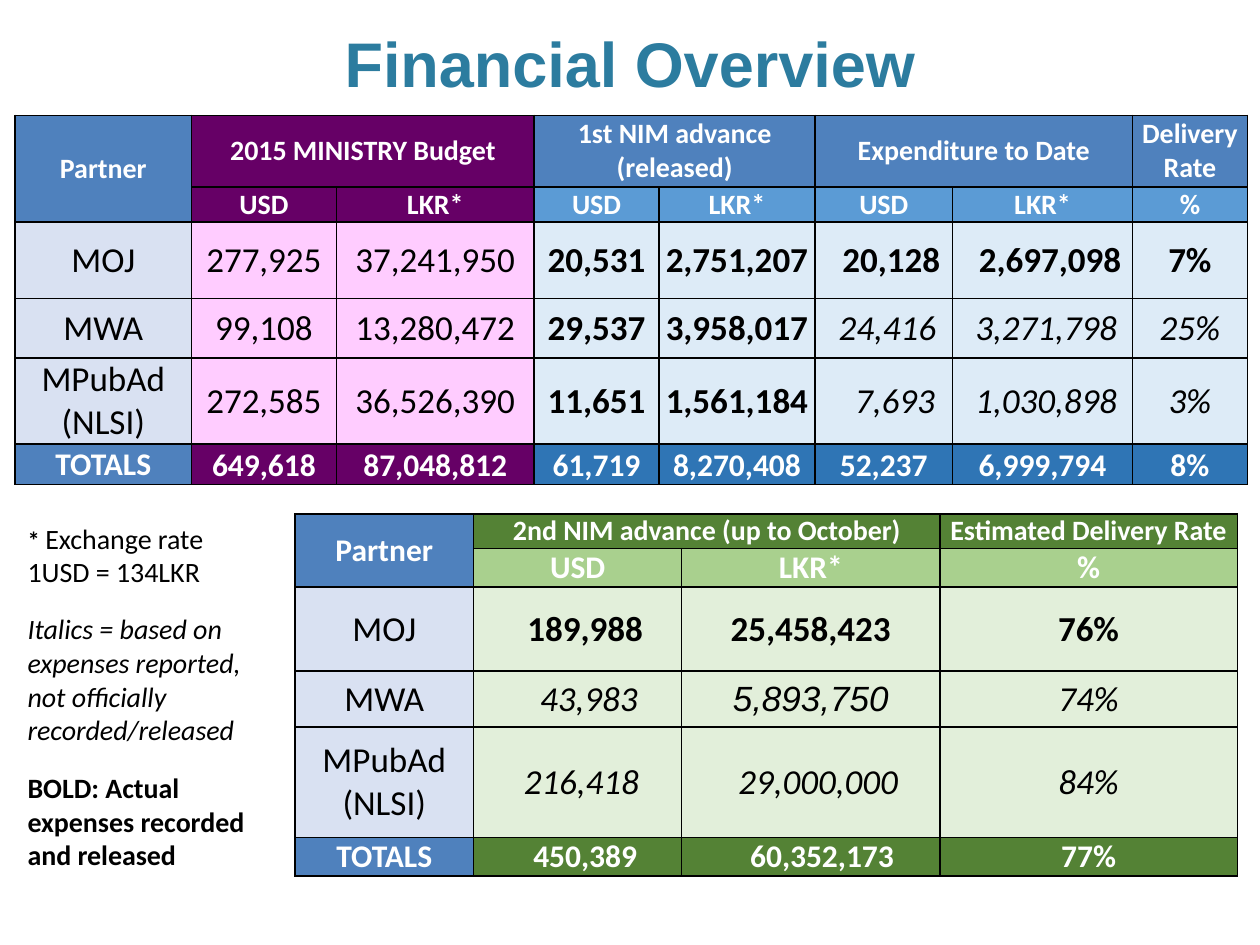
import lxml.etree
import pptx
import pptx.dml.color
import pptx.enum.text
import pptx.oxml.ns
import pptx.util

ALIGN = pptx.enum.text.PP_ALIGN
ANCHOR = pptx.enum.text.MSO_ANCHOR

presentation = pptx.Presentation()
presentation.slide_width = pptx.util.Inches(10)
presentation.slide_height = pptx.util.Inches(7.5)
slide = presentation.slides.add_slide(presentation.slide_layouts[5])

# The slide is a grid of 100 columns by 100 rows
COLUMN = presentation.slide_width / 100
ROW = presentation.slide_height / 100


def colour(value):
    return pptx.dml.color.RGBColor.from_string(value)


def add_text(paragraph, text, size=16, font="Calibri", ink="000000",
             bold=False, italic=False, align=ALIGN.LEFT):
    paragraph.alignment = align
    run = paragraph.add_run()
    run.text = text
    run.font.size = pptx.util.Pt(size)
    run.font.name = font
    run.font.bold = bold
    run.font.italic = italic
    run.font.color.rgb = colour(ink)


# Title
title = slide.shapes.title
title.left, title.top = int(6 * COLUMN), int(0.7 * ROW)
title.width, title.height = int(88 * COLUMN), int(10.6 * ROW)
title.text_frame.vertical_anchor = ANCHOR.BOTTOM
add_text(title.text_frame.paragraphs[0], "Financial Overview", size=36,
         font="Arial", ink="2C7C9F", bold=True, align=ALIGN.CENTER)

# Fills, one per column, for heading, subheading, body and totals rows
BLUE, PURPLE, GREEN, LAVENDER = "4F81BD", "660066", "548235", "D9E1F2"
budget_fills = {
    "heading": [BLUE] + [PURPLE] * 2 + [BLUE] * 5,
    "subheading": [BLUE] + [PURPLE] * 2 + ["5B9BD5"] * 5,
    "body": [LAVENDER] + ["FFCCFF"] * 2 + ["DDEBF7"] * 5,
    "totals": [BLUE] + [PURPLE] * 2 + ["2F75B5"] * 5,
}
advance_fills = {
    "heading": [BLUE] + [GREEN] * 3,
    "subheading": [BLUE] + ["A9D08E"] * 3,
    "body": [LAVENDER] + ["E2EFDA"] * 3,
    "totals": [BLUE] + [GREEN] * 3,
}
ROW_KINDS = ["heading", "subheading", "body", "body", "body", "totals"]

# Body styles, one letter per column: r regular, b bold, i italic
tables = [
    {
        "left": 1.2, "top": 12.2, "fills": budget_fills,
        "columns": [14, 11.5, 15.7, 9.9, 12.4, 10.9, 14.3, 9.1],
        "rows": [7.6, 3.7, 8.1, 6.3, 9.1, 4.3],
        "merges": [(0, 0, 1, 0), (0, 1, 0, 2), (0, 3, 0, 4), (0, 5, 0, 6)],
        "sizes": {"heading": 16, "subheading": 16, "body": 20, "totals": 18},
        "styles": {2: "rrrbbbbb", 3: "rrrbbiii", 4: "rrrbbiii"},
        "texts": [
            ["Partner", "2015 MINISTRY Budget", "", "1st NIM advance (released)", "",
             "Expenditure to Date", "", "Delivery Rate"],
            ["", "USD", "LKR*", "USD", "LKR*", "USD", "LKR*", "%"],
            ["MOJ", "277,925", "37,241,950", "20,531", "2,751,207",
             "20,128", "2,697,098", "7%"],
            ["MWA", "99,108", "13,280,472", "29,537", "3,958,017",
             "24,416", "3,271,798", "25%"],
            ["MPubAd\n(NLSI)", "272,585", "36,526,390", "11,651", "1,561,184",
             "7,693", "1,030,898", "3%"],
            ["TOTALS", "649,618", "87,048,812", "61,719", "8,270,408",
             "52,237", "6,999,794", "8%"],
        ],
        # Left margins, in columns, that push figures off centre
        "indents": {(2, 5): 1.2, (2, 6): 1.2, (3, 5): 0.6, (3, 6): 0.6,
                    (4, 5): 1.8, (4, 6): 0.6},
        "special": {},
    },
    {
        "left": 23.4, "top": 54.4, "fills": advance_fills,
        "columns": [14.2, 16.5, 20.5, 23.6],
        "rows": [3.6, 4.1, 8.9, 5.9, 11.7, 4.1],
        "merges": [(0, 0, 1, 0), (0, 1, 0, 2)],
        "sizes": {"heading": 16, "subheading": 18, "body": 20, "totals": 18},
        "styles": {2: "rbbb", 3: "riii", 4: "riii"},
        "texts": [
            ["Partner", "2nd NIM advance (up to October)", "", "Estimated Delivery Rate"],
            ["", "USD", "LKR*", "%"],
            ["MOJ", "189,988", "25,458,423", "76%"],
            ["MWA", "43,983", "5,893,750", "74%"],
            ["MPubAd\n(NLSI)", "216,418", "29,000,000", "84%"],
            ["TOTALS", "450,389", "60,352,173", "77%"],
        ],
        "indents": {(2, 1): 1.2, (3, 1): 1.8, (4, 1): 0.6, (4, 2): 1.2,
                    (5, 1): 1.2, (5, 2): 1.8},
        "special": {(0, 0): {"size": 18}, (3, 2): {"font": "Arial"}},
    },
]

# Tables
for plan in tables:
    frame = slide.shapes.add_table(
        len(plan["rows"]), len(plan["columns"]),
        int(plan["left"] * COLUMN), int(plan["top"] * ROW),
        int(sum(plan["columns"]) * COLUMN), int(sum(plan["rows"]) * ROW))
    table = frame.table
    table.first_row = table.horz_banding = False
    for column, width in zip(table.columns, plan["columns"]):
        column.width = int(width * COLUMN)
    for row, height in zip(table.rows, plan["rows"]):
        row.height = int(height * ROW)
    for top, left, bottom, right in plan["merges"]:
        table.cell(top, left).merge(table.cell(bottom, right))

    for row_index, kind in enumerate(ROW_KINDS):
        for column_index, text in enumerate(plan["texts"][row_index]):
            place = (row_index, column_index)
            cell = table.cell(*place)
            cell.fill.solid()
            cell.fill.fore_color.rgb = colour(plan["fills"][kind][column_index])
            cell.margin_left = int(plan["indents"].get(place, 0) * COLUMN)
            cell.margin_right = cell.margin_top = cell.margin_bottom = 0
            figure_total = kind == "totals" and column_index > 0
            cell.vertical_anchor = ANCHOR.BOTTOM if figure_total else ANCHOR.MIDDLE

            # Cell borders come before the fill in the cell properties
            properties = cell._tc.get_or_add_tcPr()
            for position, side in enumerate(["a:lnL", "a:lnR", "a:lnT", "a:lnB"]):
                line = lxml.etree.Element(pptx.oxml.ns.qn(side), w="12700")
                fill = lxml.etree.SubElement(line, pptx.oxml.ns.qn("a:solidFill"))
                lxml.etree.SubElement(fill, pptx.oxml.ns.qn("a:srgbClr"), val="000000")
                properties.insert(position, line)

            if not text:
                continue
            is_body = kind == "body"
            style = plan["styles"][row_index][column_index] if is_body else "b"
            text_format = {
                "size": plan["sizes"][kind], "ink": "000000" if is_body else "FFFFFF",
                "bold": style == "b", "italic": style == "i", "align": ALIGN.CENTER,
            }
            text_format.update(plan["special"].get(place, {}))
            for line_index, words in enumerate(text.split("\n")):
                text_frame = cell.text_frame
                paragraph = text_frame.add_paragraph() if line_index else text_frame.paragraphs[0]
                add_text(paragraph, words, **text_format)

# Notes beside the second table: top, height, runs
notes = [
    (54.5, 8.5, [("* ", {"size": 14, "bold": True}),
                 ("Exchange rate 1USD = 134LKR", {})]),
    (64.1, 15.7, [("Italics = based on expenses reported, not officially "
                   "recorded/released", {"italic": True})]),
    (80.9, 12.1, [("BOLD: Actual expenses recorded and released", {"bold": True})]),
]
for top, height, runs in notes:
    note = slide.shapes.add_textbox(int(1.2 * COLUMN), int(top * ROW),
                                    int(20.5 * COLUMN), int(height * ROW))
    note.text_frame.word_wrap = True
    for words, text_format in runs:
        add_text(note.text_frame.paragraphs[0], words, **text_format)

presentation.save("out.pptx")
